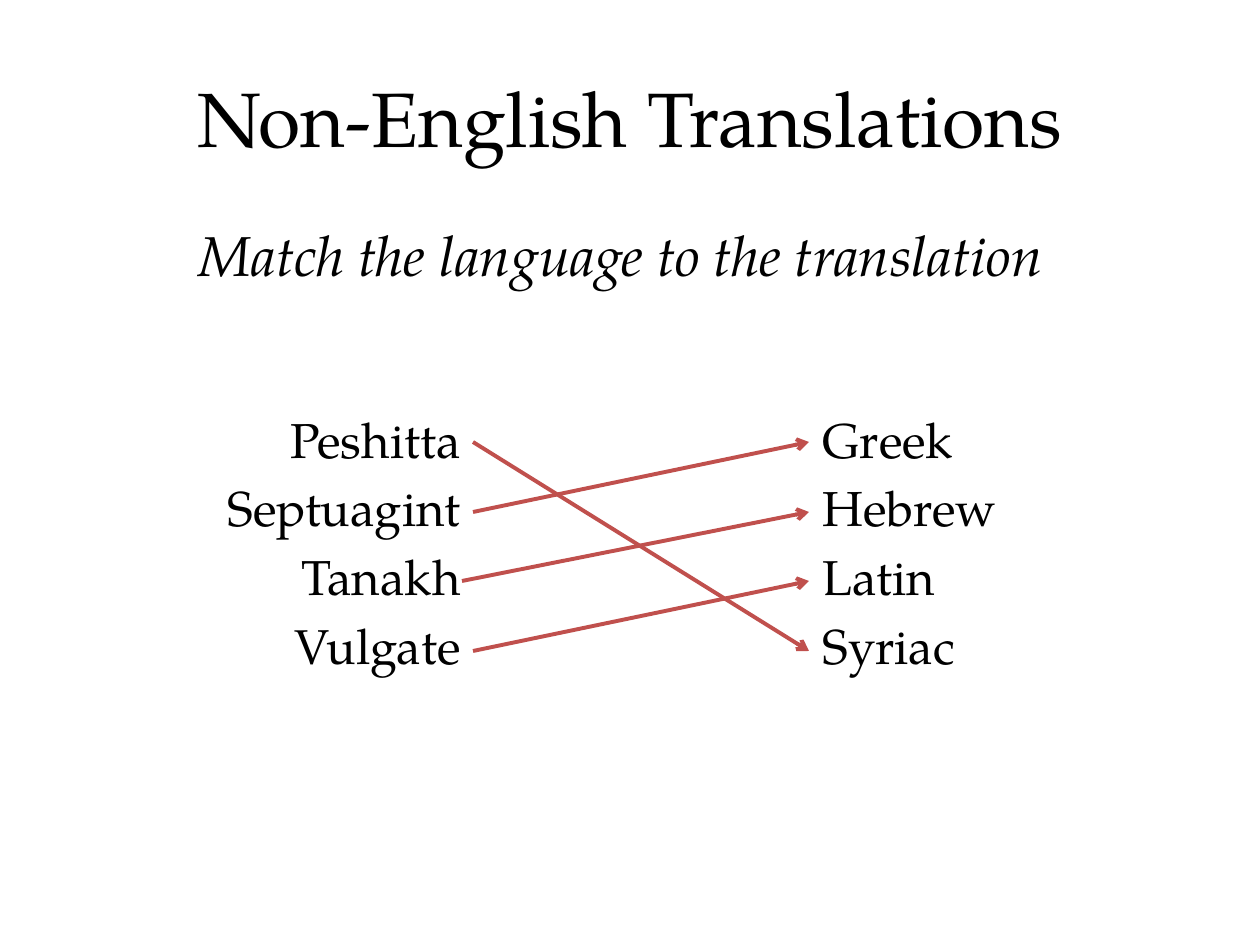
import pptx
import pptx.dml.color
import pptx.enum.shapes
import pptx.enum.text
import pptx.oxml.ns
import pptx.util
from lxml import etree

PX = 914400 / 126
COLORS = {"text": "000000", "arrow": "C0504D"}
FONT = "TeX Gyre Pagella"
ALIGN = pptx.enum.text.PP_ALIGN
TRANSLATIONS = ["Peshitta", "Septuagint", "Tanakh", "Vulgate"]
LANGUAGES = ["Greek", "Hebrew", "Latin", "Syriac"]
ANSWERS = {"Peshitta": "Syriac", "Septuagint": "Greek", "Tanakh": "Hebrew", "Vulgate": "Latin"}
INSETS = {"Tanakh": -11}


def emu(length):
    """Turn px into EMU."""
    return pptx.util.Emu(round(length * PX))


def rgb(name):
    """Look up a colour by its role."""
    return pptx.dml.color.RGBColor.from_string(COLORS[name])


def fill_text(frame, lines, size, align, italic=False):
    """Write one formatted paragraph for each line."""
    for index, line in enumerate(lines):
        para = frame.paragraphs[0] if index == 0 else frame.add_paragraph()
        para.alignment = align
        para.space_before = pptx.util.Pt(0.2 * size if index else 0)
        span = para.add_run()
        span.text = line
        formats = {"name": FONT, "size": pptx.util.Pt(size), "italic": italic}
        for key, value in formats.items():
            setattr(span.font, key, value)
        span.font.color.rgb = rgb("text")


def add_title(page, left, top, width, height):
    """Place and fill the title placeholder."""
    title = page.shapes.title
    places = {"left": left, "top": top, "width": width, "height": height}
    for key, value in places.items():
        setattr(title, key, emu(value))
    title.text_frame.vertical_anchor = pptx.enum.text.MSO_ANCHOR.MIDDLE
    fill_text(title.text_frame, ["Non-English Translations"], 44, ALIGN.CENTER)


def add_text(page, left, top, width, height, lines, size, align, italic=False):
    """Add a text box holding the given lines."""
    box = page.shapes.add_textbox(emu(left), emu(top), emu(width), emu(height))
    box.text_frame.word_wrap = True
    fill_text(box.text_frame, lines, size, align, italic)
    return box


def add_prompt(page, left, top, width, height):
    """Add the instruction as one unwrapped line."""
    lines = ["Match the language to the translation"]
    box = add_text(page, left, top, width, height, lines, 32, ALIGN.LEFT, True)
    box.text_frame.word_wrap = False
    box.text_frame.auto_size = pptx.enum.text.MSO_AUTO_SIZE.SHAPE_TO_FIT_TEXT


def add_arrow(page, start, end):
    """Draw an open-headed arrow between two points."""
    arrow = page.shapes.add_connector(
        pptx.enum.shapes.MSO_CONNECTOR.STRAIGHT, *map(emu, start + end)
    )
    arrow.line.color.rgb = rgb("arrow")
    arrow.line.width = pptx.util.Pt(2.25)
    line = arrow.line._get_or_add_ln()
    etree.SubElement(line, pptx.oxml.ns.qn("a:tailEnd"), type="arrow")
    properties = line.getparent()
    etree.SubElement(properties, pptx.oxml.ns.qn("a:effectLst"))


def add_matching(page, left, top, width, height):
    """Add both word lists and the arrows joining their answers."""
    left_width, right_width = 270, 208
    right = left + width - right_width
    add_text(page, left, top, left_width, height, TRANSLATIONS, 28, ALIGN.RIGHT)
    add_text(page, right, top, right_width, height, LANGUAGES, 28, ALIGN.LEFT)
    rows = [top + 39 + round(209 * index / 3) for index in range(len(LANGUAGES))]
    for word, row in zip(TRANSLATIONS, rows):
        start = (left + left_width + INSETS.get(word, 0), row)
        end = (right - 1, rows[LANGUAGES.index(ANSWERS[word])])
        add_arrow(page, start, end)


def main():
    """Build and save the deck."""
    deck = pptx.Presentation()
    deck.slide_width, deck.slide_height = emu(1260), emu(945)
    page = deck.slides.add_slide(deck.slide_layouts[5])
    add_title(page, 63, 38, 1134, 158)
    add_prompt(page, 186, 214, 886, 81)
    add_matching(page, 203, 403, 815, 297)
    deck.save("out.pptx")


if __name__ == "__main__":
    main()
